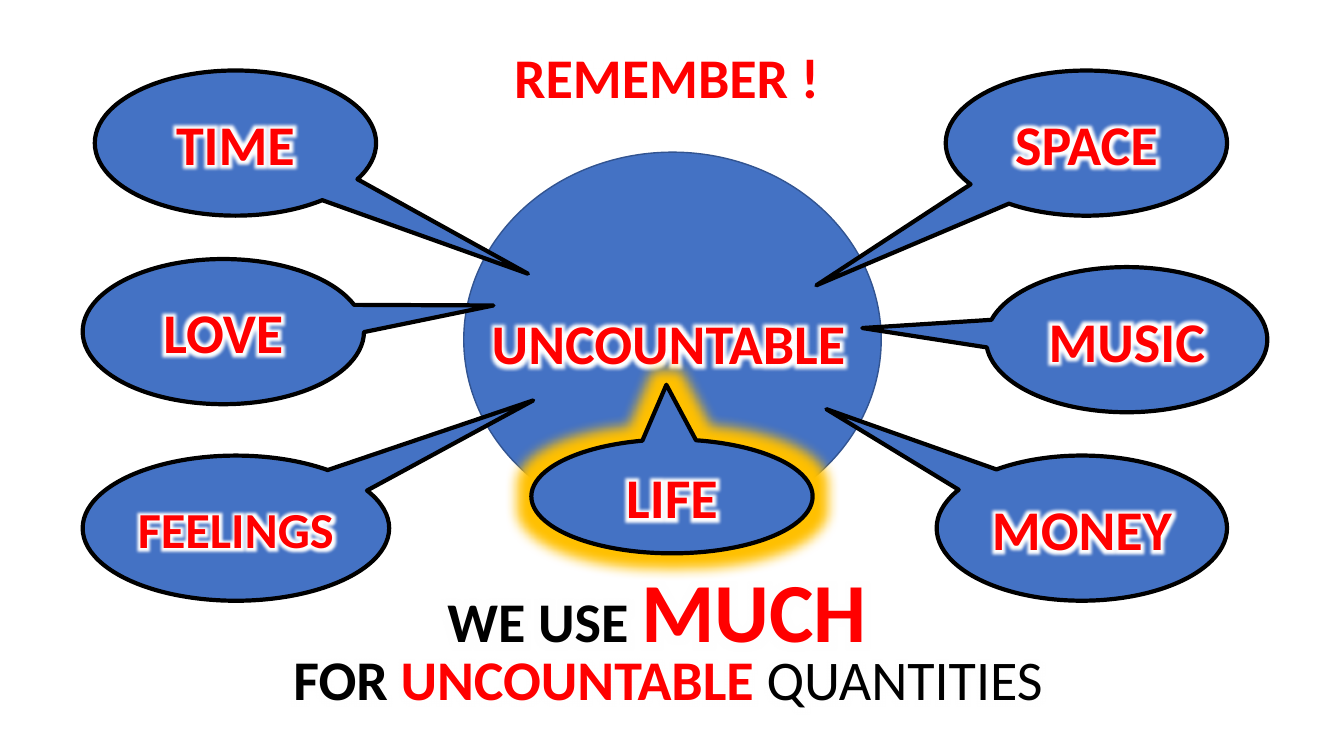
from lxml import etree
from pptx import Presentation
from pptx.dml.color import RGBColor
from pptx.enum import shapes, text
from pptx.oxml import ns
from pptx.util import Inches, Pt

COLORS = {
    "blue": "4472C4",
    "navy": "325491",
    "black": "000000",
    "red": "FF0000",
    "white": "FFFFFF",
    "gold": "FFC000",
}

# Word, left, top, width, height, pointer tip (fractions of the size), text size
CALLOUTS = [
    ("TIME", 0.94, 0.7, 2.79, 1.44, (1.04, 0.9), 40),
    ("LOVE", 0.82, 2.57, 2.79, 1.44, (0.96, -0.18), 40),
    ("FEELINGS", 0.82, 4.52, 3.04, 1.44, (0.97, -0.88), 36),
    ("SPACE", 9.38, 0.7, 2.79, 1.44, (-0.96, 0.98), 40),
    ("MUSIC", 9.78, 2.65, 2.79, 1.44, (-0.94, -0.08), 40),
    ("MONEY", 9.29, 4.52, 2.88, 1.44, (-0.88, -0.82), 40),
    ("LIFE", 5.27, 4.36, 2.79, 1.13, (-0.02, -0.98), 40),
]


def rgb(name):
    return RGBColor.from_string(COLORS[name])


def color_xml(parent, color):
    etree.SubElement(parent, ns.qn("a:srgbClr"), val=COLORS[color])


def glow_effects(color, radius):
    effects = etree.Element(ns.qn("a:effectLst"))
    glow = etree.SubElement(effects, ns.qn("a:glow"), rad=str(Pt(radius)))
    color_xml(glow, color)
    return effects


def add_span(para, words, size=40, color="red", bold=True):
    """Add a run; red words get a thin outline and a white glow."""
    span = para.add_run()
    span.text = words
    font = span.font
    font.name, font.size, font.bold = "Calibri", Pt(size), bold
    font.color.rgb = rgb(color)
    if color == "red":
        properties = span._r.get_or_add_rPr()
        outline = etree.Element(ns.qn("a:ln"), w=str(Pt(0.75)))
        color_xml(etree.SubElement(outline, ns.qn("a:solidFill")), "black")
        properties.insert(0, outline)
        properties.insert(2, glow_effects("white", 11))


def add_oval(page, kind, place, line="black", weight=3):
    oval = page.shapes.add_shape(kind, *map(Inches, place))
    oval.shadow.inherit = False
    oval.fill.solid()
    oval.fill.fore_color.rgb = rgb("blue")
    oval.line.color.rgb = rgb(line)
    oval.line.width = Pt(weight)
    return oval


def add_callout(page, word, left, top, width, height, tip, size):
    callout = add_oval(page, shapes.MSO_SHAPE.OVAL_CALLOUT,
                       (left, top, width, height))
    for index, offset in enumerate(tip):
        callout.adjustments[index] = offset
    frame = callout.text_frame
    frame.vertical_anchor = text.MSO_ANCHOR.MIDDLE
    para = frame.paragraphs[0]
    para.alignment = text.PP_ALIGN.CENTER
    add_span(para, word, size=size)
    return callout


def add_label(page, place, spans, align=text.PP_ALIGN.CENTER):
    box = page.shapes.add_textbox(*map(Inches, place))
    box.text_frame.word_wrap = False
    box.text_frame.auto_size = text.MSO_AUTO_SIZE.SHAPE_TO_FIT_TEXT
    para = box.text_frame.paragraphs[0]
    para.alignment = align
    for words, style in spans:
        add_span(para, words, **style)


def format_title(page, words):
    title = page.shapes.title
    title.left, title.top = Inches(5), Inches(0.37)
    title.width, title.height = Inches(3.26), Inches(0.77)
    frame = title.text_frame
    frame.auto_size = text.MSO_AUTO_SIZE.NONE
    frame.vertical_anchor = text.MSO_ANCHOR.TOP
    frame.paragraphs[0].alignment = text.PP_ALIGN.LEFT
    add_span(frame.paragraphs[0], words)


def main():
    deck = Presentation()
    deck.slide_width, deck.slide_height = Inches(13.33), Inches(7.5)
    page = deck.slides.add_slide(deck.slide_layouts[5])
    format_title(page, "REMEMBER !")

    # Central circle
    add_oval(page, shapes.MSO_SHAPE.OVAL, (4.6, 1.51, 4.14, 3.72),
             line="navy", weight=1)
    add_label(page, (4.76, 3.01, 3.74, 0.77), [("UNCOUNTABLE", {})])

    # Rule at the bottom
    add_label(page, (4.34, 5.49, 4.4, 1.11),
              [("WE USE ", {"color": "black"}), ("MUCH", {"size": 60})],
              align=text.PP_ALIGN.LEFT)
    add_label(page, (2.74, 6.35, 7.77, 0.77),
              [("FOR", {"color": "black"}), (" UNCOUNTABLE ", {}),
               ("QUANTITIES", {"color": "black", "bold": False})])

    # Callouts around the circle; the last one glows
    callouts = [add_callout(page, *callout) for callout in CALLOUTS]
    properties = callouts[-1]._element.spPr
    properties.replace(properties.find(ns.qn("a:effectLst")),
                       glow_effects("gold", 18))

    deck.save("out.pptx")


if __name__ == "__main__":
    main()
